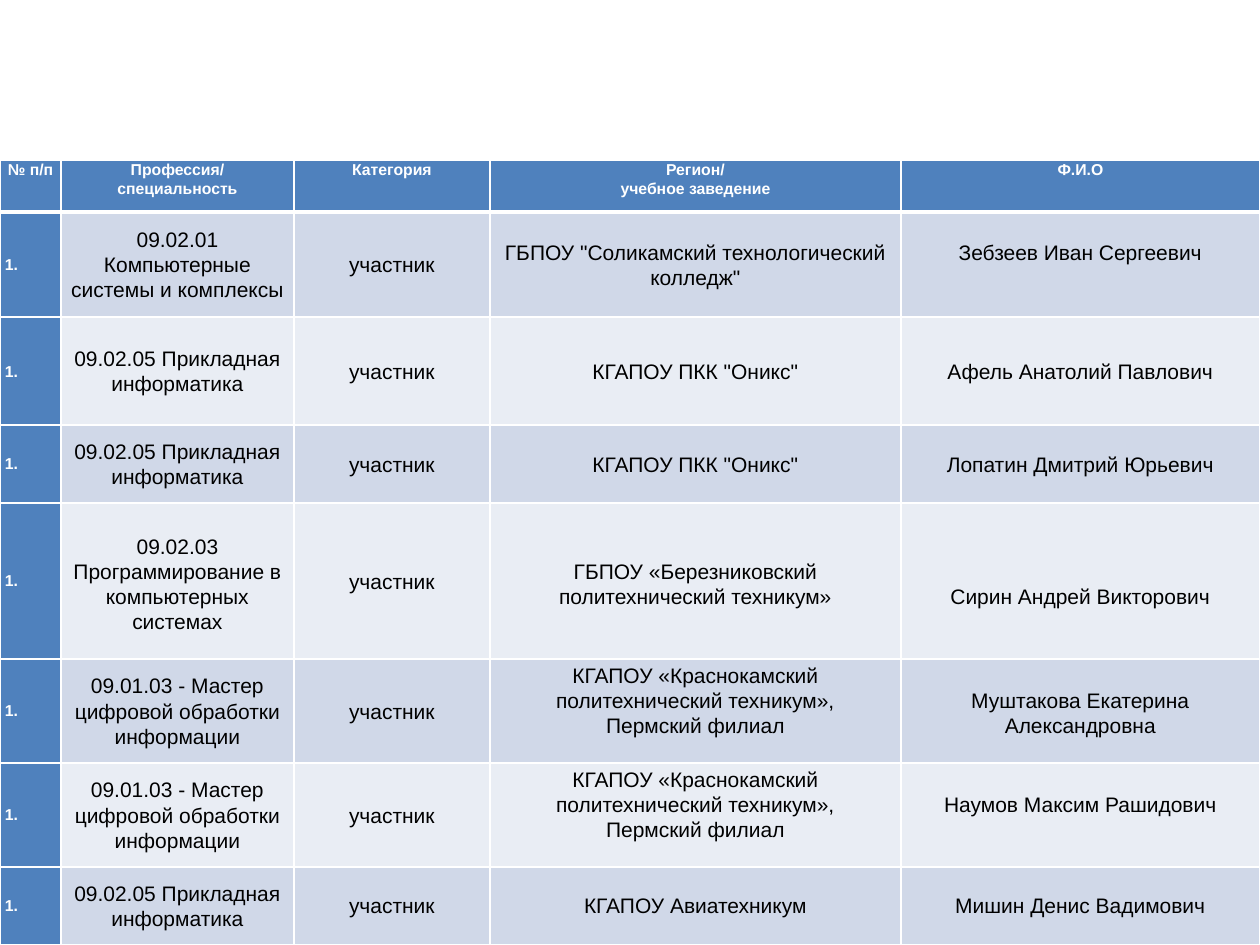
from dataclasses import dataclass

from lxml import etree
from pptx import Presentation
from pptx import util as u
from pptx.dml.color import RGBColor
from pptx.enum import text
from pptx.oxml import ns

# Content
HEADERS = ["№ п/п", "Профессия/\nспециальность", "Категория",
           "Регион/\nучебное заведение", "Ф.И.О"]
NUMBER = "1."
ROLE = "участник"
APPLIED = "09.02.05 Прикладная информатика"
MASTER = "09.01.03 - Мастер цифровой обработки информации"
ONYX = 'КГАПОУ ПКК "Оникс"'
KRASNOKAMSK = "КГАПОУ «Краснокамский политехнический техникум»,\vПермский филиал"

# Specialty, college, name
PARTICIPANTS = [
    ("09.02.01 Компьютерные системы и комплексы",
     'ГБПОУ "Соликамский технологический колледж"', "Зебзеев Иван Сергеевич"),
    (APPLIED, ONYX, "Афель Анатолий Павлович"),
    (APPLIED, ONYX, "Лопатин Дмитрий Юрьевич"),
    ("09.02.03 Программирование в компьютерных системах",
     "ГБПОУ «Березниковский политехнический техникум»", "Сирин Андрей Викторович"),
    (MASTER, KRASNOKAMSK, "Муштакова Екатерина Александровна"),
    (MASTER, KRASNOKAMSK, "Наумов Максим Рашидович"),
    (APPLIED, "КГАПОУ Авиатехникум", "Мишин Денис Вадимович"),
]

# Cells raised by whole text lines: (row, column) -> (anchor, lines)
MIDDLE, BOTTOM = text.MSO_ANCHOR.MIDDLE, text.MSO_ANCHOR.BOTTOM
RAISED = {
    (1, 4): (MIDDLE, 1),
    (4, 1): (BOTTOM, 1), (4, 3): (BOTTOM, 2), (4, 4): (BOTTOM, 2),
    (5, 3): (BOTTOM, 1), (5, 4): (BOTTOM, 1),
    (6, 3): (BOTTOM, 1), (6, 4): (BOTTOM, 2),
}

# Layout in px
PX = u.Inches(1) // 126
PAGE = (1260, 945)
TABLE_TOP = 160
COLUMNS = [61, 233, 196, 411, 359]
ROWS = [52, 105, 108, 78, 156, 104, 104, 78]
SIDE_MARGIN = 5
LINE = 25


@dataclass(frozen=True)
class Theme:
    font: str = "Arial"
    accent: str = "4F81BD"
    bands: tuple = ("D0D8E8", "E9EDF4")
    light: str = "FFFFFF"
    dark: str = "000000"
    small: int = 9
    body: int = 12
    spacing: float = 1.07
    thin: int = 1
    thick: int = 3


THEME = Theme()


def add_borders(cell, widths):
    properties = cell._tc.get_or_add_tcPr()
    for side, width in widths.items():
        line = etree.SubElement(properties, ns.qn(f"a:ln{side}"), w=str(u.Pt(width)))
        fill = etree.SubElement(line, ns.qn("a:solidFill"))
        etree.SubElement(fill, ns.qn("a:srgbClr"), val=THEME.light)


def style_cell(cell, row, column):
    header, number = row == 0, column == 0
    strong = header or number

    # Borders and fill
    add_borders(cell, {"L": THEME.thin, "R": THEME.thin,
                       "T": THEME.thick if row == 1 else THEME.thin,
                       "B": THEME.thick if header else THEME.thin})
    cell.fill.solid()
    cell.fill.fore_color.rgb = RGBColor.from_string(
        THEME.accent if strong else THEME.bands[(row - 1) % 2])

    # Text position
    anchor, lines = RAISED.get((row, column), (MIDDLE, 0))
    cell.vertical_anchor = text.MSO_ANCHOR.TOP if header else anchor
    cell.margin_left = cell.margin_right = SIDE_MARGIN * PX
    cell.margin_top, cell.margin_bottom = 0, lines * LINE * PX

    # Type
    for para in cell.text_frame.paragraphs:
        centred = header or not number
        para.alignment = text.PP_ALIGN.CENTER if centred else text.PP_ALIGN.LEFT
        para.line_spacing = THEME.spacing
        for span in para.runs:
            span.font.name = THEME.font
            span.font.size = u.Pt(THEME.small if strong else THEME.body)
            span.font.bold = strong
            span.font.color.rgb = RGBColor.from_string(
                THEME.light if strong else THEME.dark)


def main():
    deck = Presentation()
    deck.slide_width, deck.slide_height = (side * PX for side in PAGE)
    page = deck.slides.add_slide(deck.slide_layouts[6])

    # Table frame
    table = page.shapes.add_table(
        len(ROWS), len(COLUMNS), 0, TABLE_TOP * PX,
        sum(COLUMNS) * PX, sum(ROWS) * PX).table
    table.first_row = table.horz_banding = False
    for column, width in zip(table.columns, COLUMNS):
        column.width = width * PX
    for row, height in zip(table.rows, ROWS):
        row.height = height * PX

    # Table cells
    records = [HEADERS] + [(NUMBER, specialty, ROLE, college, name)
                           for specialty, college, name in PARTICIPANTS]
    for r, record in enumerate(records):
        for c, words in enumerate(record):
            cell = table.cell(r, c)
            cell.text_frame.text = words
            style_cell(cell, r, c)

    deck.save("out.pptx")


if __name__ == "__main__":
    main()
